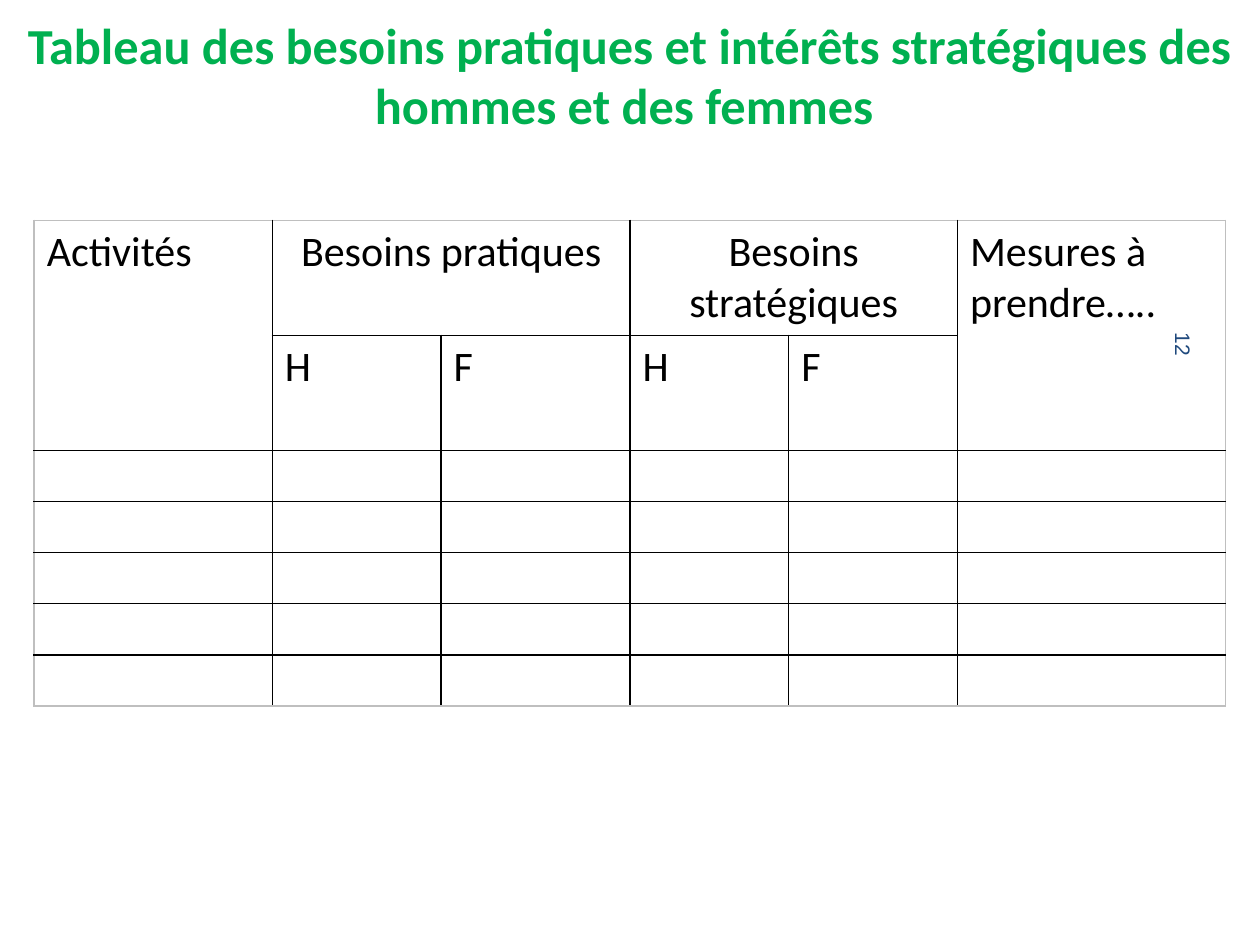
import pptx
import pptx.dml.color
import pptx.enum.text
import pptx.oxml
import pptx.oxml.ns
import pptx.util
from pptx.util import Cm

ALIGN = pptx.enum.text.PP_ALIGN


def rgb(code):
    return pptx.dml.color.RGBColor.from_string(code)


class Deck:
    font, ink, edge = "Calibri", "000000", "BFBFBF"

    def __init__(self, width, height):
        self.prs = pptx.Presentation()
        self.prs.slide_width, self.prs.slide_height = Cm(width), Cm(height)
        self.s = self.prs.slides.add_slide(self.prs.slide_layouts[6])

    def set_text(self, tf, text, size, color, font=None, bold=False, align=ALIGN.LEFT):
        p = tf.paragraphs[0]
        p.text, p.alignment = text, align
        p.font.name, p.font.size = font or self.font, pptx.util.Pt(size)
        p.font.bold, p.font.color.rgb = bold, rgb(color)

    def text(self, x, y, w, h, text, size, color, rotation=0, **style):
        sp = self.s.shapes.add_textbox(Cm(x), Cm(y), Cm(w), Cm(h))
        sp.rotation = rotation
        tf = sp.text_frame
        tf.word_wrap = True
        tf.vertical_anchor = pptx.enum.text.MSO_ANCHOR.MIDDLE
        self.set_text(tf, text, size, color, **style)

    def borders(self, cell, outer):
        tc_pr = cell._tc.get_or_add_tcPr()
        for i, side in enumerate("LRTB"):
            color = self.edge if side in outer else self.ink
            tc_pr.insert(i, pptx.oxml.parse_xml(
                f'<a:ln{side} {pptx.oxml.ns.nsdecls("a")} w="12700"><a:solidFill>'
                f'<a:srgbClr val="{color}"/></a:solidFill></a:ln{side}>'))

    def table(self, x, y, widths, heights):
        rows, cols = len(heights), len(widths)
        sp = self.s.shapes.add_table(rows, cols, Cm(x), Cm(y),
                                     Cm(sum(widths)), Cm(sum(heights)))
        table = sp.table
        table.first_row = table.horz_banding = False
        for col, width in zip(table.columns, widths):
            col.width = Cm(width)
        for row, height in zip(table.rows, heights):
            row.height = Cm(height)
        for r in range(rows):
            for c in range(cols):
                cell = table.cell(r, c)
                cell.fill.background()
                at_edge = {"L": c == 0, "R": c == cols - 1,
                           "T": r == 0, "B": r == rows - 1}
                self.borders(cell, [side for side, hit in at_edge.items() if hit])
        return table

    def header(self, table, r, c, text, down=1, across=1):
        cell = table.cell(r, c)
        if down > 1 or across > 1:
            cell.merge(table.cell(r + down - 1, c + across - 1))
        align = ALIGN.CENTER if across > 1 else ALIGN.LEFT
        self.set_text(cell.text_frame, text, 24, self.ink, align=align)


def main():
    deck = Deck(25.4, 19.05)

    # Page number, turned along the right edge
    deck.text(19.41, 10.39, 8.89, 1.02, "12", 12, "1F497D", rotation=90, font="Arial")

    # Title
    deck.text(0, 0.13, 25.4, 2.74,
              "Tableau des besoins pratiques et intérêts stratégiques "
              "des hommes et des femmes ",
              28.8, "00B050", bold=True, align=ALIGN.CENTER)

    # Needs table: two header rows, five empty rows
    table = deck.table(0.69, 4.44, [4.8, 3.4, 3.81, 3.2, 3.4, 5.4],
                       [2.32] * 2 + [1.03] * 5)
    deck.header(table, 0, 0, "Activités", down=2)
    deck.header(table, 0, 1, "Besoins pratiques", across=2)
    deck.header(table, 0, 3, "Besoins stratégiques", across=2)
    deck.header(table, 0, 5, "Mesures à prendre…..", down=2)
    for c, label in enumerate("HFHF", 1):
        deck.header(table, 1, c, label)

    deck.prs.save("out.pptx")


if __name__ == "__main__":
    main()
